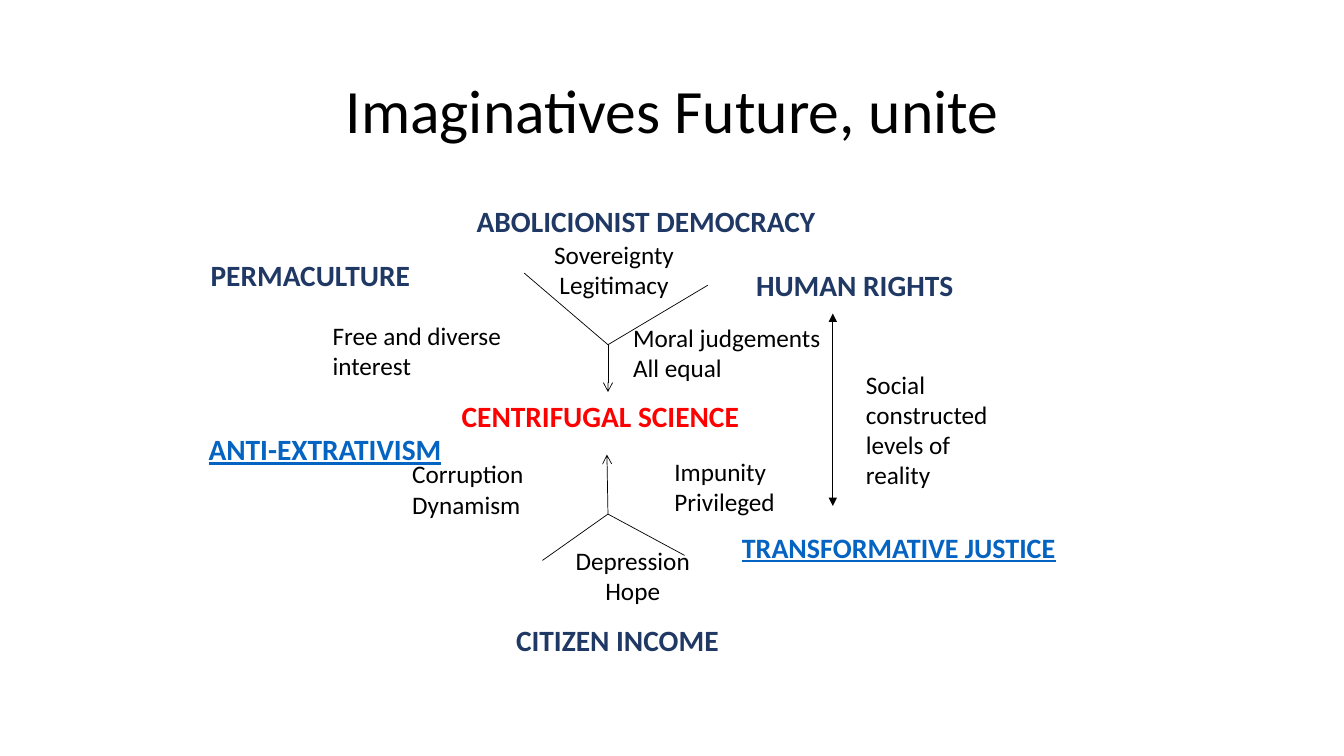
from dataclasses import dataclass

from lxml import etree
from pptx import Presentation
from pptx.dml.color import RGBColor
from pptx.enum.shapes import MSO_CONNECTOR
from pptx.enum.text import MSO_ANCHOR, MSO_AUTO_SIZE, PP_ALIGN
from pptx.oxml.ns import qn
from pptx.util import Inches, Pt

LEFT, CENTER = PP_ALIGN.LEFT, PP_ALIGN.CENTER
MIDDLE = MSO_ANCHOR.MIDDLE
FIT_SHAPE = MSO_AUTO_SIZE.SHAPE_TO_FIT_TEXT
STRAIGHT = MSO_CONNECTOR.STRAIGHT


@dataclass(frozen=True)
class Theme:
    font: str = "Calibri"
    black: RGBColor = RGBColor(0x00, 0x00, 0x00)
    navy: RGBColor = RGBColor(0x20, 0x38, 0x64)
    blue: RGBColor = RGBColor(0x05, 0x63, 0xC1)
    red: RGBColor = RGBColor(0xFF, 0x00, 0x00)
    title: int = 44
    heading: int = 21
    small_heading: int = 20
    body: int = 18
    line: float = 0.5


theme = Theme()


def add_text(s, box, lines, size, color, aligns=(LEFT,), bold=False, underline=False, wrap=False):
    """Add one paragraph per line; a single alignment applies to all lines."""
    tb = s.shapes.add_textbox(*map(Inches, box))
    tf = tb.text_frame
    tf.word_wrap = wrap
    tf.auto_size = FIT_SHAPE
    for i, line in enumerate(lines):
        p = tf.paragraphs[0] if i == 0 else tf.add_paragraph()
        p.text = line
        p.alignment = aligns[i % len(aligns)]
        p.font.name = theme.font
        p.font.size = Pt(size)
        p.font.bold = bold
        p.font.underline = underline
        p.font.color.rgb = color
    return tb


def add_line(s, start, end, head=None, tail=None):
    """Add a thin line; head is the arrowhead at start, tail the one at end."""
    c = s.shapes.add_connector(STRAIGHT, *map(Inches, (*start, *end)))
    c.line.color.rgb = theme.black
    c.line.width = Pt(theme.line)
    ln = c.line._get_or_add_ln()
    for tag, kind in (("a:headEnd", head), ("a:tailEnd", tail)):
        if kind:
            etree.SubElement(ln, qn(tag), type=kind)
    etree.SubElement(c._element.spPr, qn("a:effectLst"))


prs = Presentation()
prs.slide_width, prs.slide_height = Inches(13.33), Inches(7.5)
s = prs.slides.add_slide(prs.slide_layouts[6])

title = add_text(s, (0.92, 0.4, 11.5, 1.45), ["Imaginatives Future, unite"],
                 theme.title, theme.black, (CENTER,), wrap=True)
title.text_frame.auto_size = MSO_AUTO_SIZE.NONE
title.text_frame.vertical_anchor = MIDDLE
title.text_frame.paragraphs[0].line_spacing = 0.9

# Two forks whose stems point at the central heading
upper_hub, lower_hub = (6.03, 3.42), (6.03, 5.1)
forks = [
    (upper_hub, [(5.2, 2.71), (7.02, 2.83)], (6.03, 3.89)),
    (lower_hub, [(5.38, 5.56), (6.79, 5.51)], (6.02, 4.51)),
]
for hub, branches, tip in forks:
    for branch in branches:
        add_line(s, branch, hub)
    add_line(s, hub, tip, tail="arrow")

add_line(s, (8.26, 3.11), (8.26, 5.02), head="triangle", tail="triangle")

# Box, lines, alignments, wrap
notes = [
    ((5.61, 5.36, 1.35, 0.71), ["Depression", "Hope"], (LEFT, CENTER), False),
    ((6.18, 3.15, 2.15, 0.71), ["Moral judgements", "All equal"], (LEFT,), True),
    ((3.2, 3.13, 2.53, 0.71), ["Free and diverse interest"], (LEFT,), True),
    ((5.39, 2.32, 1.4, 0.71), ["Sovereignty", "Legitimacy"], (CENTER,), False),
    ((3.99, 4.5, 1.71, 0.71), ["Corruption", "Dynamism"], (LEFT,), True),
    ((6.59, 4.48, 1.71, 0.71), ["Impunity", "Privileged"], (LEFT,), True),
    ((8.49, 3.61, 1.48, 1.31), ["Social", "constructed", "levels of", "reality"], (LEFT,), False),
]
for box, lines, aligns, wrap in notes:
    add_text(s, box, lines, theme.body, theme.black, aligns, wrap=wrap)

# Box, text, size, colour, underline
headings = [
    ((5.02, 6.12, 2.24, 0.45), "CITIZEN INCOME", theme.heading, theme.navy, False),
    ((7.26, 5.21, 3.34, 0.44), "TRANSFORMATIVE JUSTICE", theme.small_heading, theme.blue, True),
    ((1.97, 4.23, 2.54, 0.45), "ANTI-EXTRATIVISM", theme.heading, theme.blue, True),
    ((4.63, 1.97, 3.74, 0.45), "ABOLICIONIST DEMOCRACY", theme.heading, theme.navy, False),
    ((4.48, 3.9, 2.98, 0.45), "CENTRIFUGAL SCIENCE", theme.heading, theme.red, False),
    ((7.4, 2.6, 2.18, 0.45), "HUMAN RIGHTS", theme.heading, theme.navy, False),
    ((1.99, 2.5, 2.2, 0.45), "PERMACULTURE", theme.heading, theme.navy, False),
]
for box, text, size, color, underline in headings:
    add_text(s, box, [text], size, color, bold=True, underline=underline)

prs.save("out.pptx")
